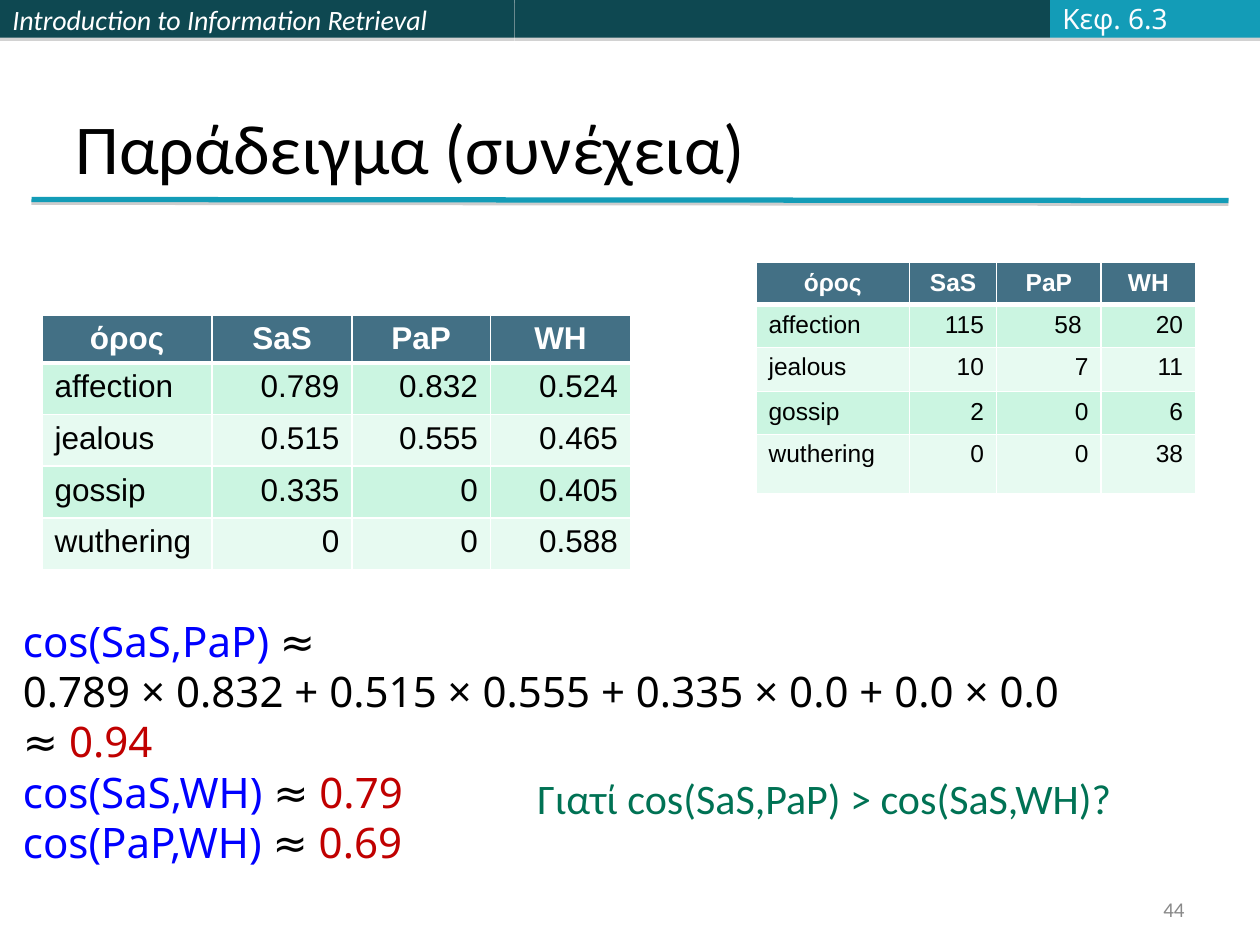
from dataclasses import dataclass

from lxml import etree
from pptx import Presentation
from pptx.dml.color import RGBColor
from pptx.enum.shapes import MSO_CONNECTOR, MSO_SHAPE
from pptx.enum.text import MSO_ANCHOR, PP_ALIGN
from pptx.oxml.ns import qn
from pptx.util import Inches, Pt

LEFT, CENTER, RIGHT = PP_ALIGN.LEFT, PP_ALIGN.CENTER, PP_ALIGN.RIGHT
TOP, MIDDLE, BOTTOM = MSO_ANCHOR.TOP, MSO_ANCHOR.MIDDLE, MSO_ANCHOR.BOTTOM
RECTANGLE, STRAIGHT = MSO_SHAPE.RECTANGLE, MSO_CONNECTOR.STRAIGHT
TITLE_ONLY = 5
GRID_COLUMNS, GRID_ROWS = 120, 90
SLIDE_WIDTH, SLIDE_HEIGHT = Inches(10), Inches(7.5)


@dataclass(frozen=True)
class Theme:
    dark: str = "0E4851"
    accent: str = "139CB7"
    shadow: str = "808080"
    white: str = "FFFFFF"
    pale: str = "FBFCFF"
    black: str = "000000"
    blue: str = "0000FF"
    red: str = "C00000"
    green: str = "007254"
    gray: str = "898989"
    table_head: str = "437085"
    bands: tuple = ("CBF5E1", "E7FAF1")
    body_font: str = "Calibri"
    formula_font: str = "Noto Sans"
    table_font: str = "Arial"
    title_size: int = 40
    formula_size: int = 24
    formula_leading: float = 28.8
    bar_size: int = 16
    number_size: int = 12


THEME = Theme()
HEADINGS = ["όρος", "SaS", "PaP", "WH"]
WEIGHTS = [
    HEADINGS,
    ["affection", "0.789", "0.832", "0.524"],
    ["jealous", "0.515", "0.555", "0.465"],
    ["gossip", "0.335", "0", "0.405"],
    ["wuthering", "0", "0", "0.588"],
]
COUNTS = [
    HEADINGS,
    ["affection", "115", "58 ", "20"],
    ["jealous", "10", "7", "11"],
    ["gossip", "2", "0", "6"],
    ["wuthering", "0", "0", "38"],
]
FORMULAS = [
    [("cos(SaS,PaP) ", THEME.blue), ("≈", THEME.black)],
    [("0.789 × 0.832 + 0.515 × 0.555 + 0.335 × 0.0 + 0.0 × 0.0", THEME.black)],
    [("≈ ", THEME.black), ("0.94", THEME.red)],
    [("cos(SaS,WH)", THEME.blue), (" ≈ ", THEME.black), ("0.79", THEME.red)],
    [("cos(PaP,WH) ", THEME.blue), ("≈ ", THEME.black), ("0.69", THEME.red)],
]


def grid(*lengths):
    units = (SLIDE_WIDTH / GRID_COLUMNS, SLIDE_HEIGHT / GRID_ROWS)
    return [round(length * units[index % 2]) for index, length in enumerate(lengths)]


def apply_values(target, values):
    for name, value in values.items():
        setattr(target, name, value)


def add_span(para, text, color, size, name, **style):
    span = para.add_run()
    span.text = text
    apply_values(span.font, {"size": Pt(size), "name": name, **style})
    span.font.color.rgb = RGBColor.from_string(color)


def write_line(frame, text, color, size, name, align=LEFT, anchor=TOP, **style):
    apply_values(frame, {"word_wrap": True, "vertical_anchor": anchor})
    para = frame.paragraphs[0]
    para.alignment = align
    add_span(para, text, color, size, name, **style)


def add_shadow(shape, distance, opacity):
    effects = etree.SubElement(shape._element.spPr, qn("a:effectLst"))
    shadow = etree.SubElement(effects, qn("a:outerShdw"), blurRad="0",
                              dist=str(Pt(distance)), dir="5400000", rotWithShape="0")
    color = etree.SubElement(shadow, qn("a:srgbClr"), val=THEME.shadow)
    etree.SubElement(color, qn("a:alpha"), val=str(opacity * 1000))


def add_bar(page, left, width, color):
    bar = page.shapes.add_shape(RECTANGLE, *grid(left, 0, width, 3.6))
    bar.fill.solid()
    bar.fill.fore_color.rgb = RGBColor.from_string(color)
    bar.line.fill.background()
    add_shadow(bar, 1.8, 35)
    return bar


def add_rule(page):
    rule = page.shapes.add_connector(STRAIGHT, *grid(3, 19, 117, 19.1))
    rule.line.color.rgb = RGBColor.from_string(THEME.accent)
    rule.line.width = Pt(3)
    add_shadow(rule, 1.6, 38)


def format_title(page, text):
    title = page.shapes.title
    left, top, width, height = grid(6, 3.6, 108, 15)
    apply_values(title, {"left": left, "top": top, "width": width, "height": height})
    write_line(title.text_frame, text, THEME.black, THEME.title_size,
               THEME.body_font, anchor=BOTTOM)


def add_label(page, place, *text_format, **style):
    box = page.shapes.add_textbox(*grid(*place))
    write_line(box.text_frame, *text_format, **style)


def add_formulas(page, place, lines):
    frame = page.shapes.add_textbox(*grid(*place)).text_frame
    frame.word_wrap = True
    for index, line in enumerate(lines):
        para = frame.add_paragraph() if index else frame.paragraphs[0]
        para.line_spacing = Pt(THEME.formula_leading)
        for text, color in line:
            add_span(para, text, color, THEME.formula_size, THEME.formula_font)


def border_cell(cell, widths):
    properties = cell._tc.get_or_add_tcPr()
    for index, (side, width) in enumerate(widths.items()):
        line = etree.Element(qn(f"a:{side}"), w=str(Pt(width)))
        fill = etree.SubElement(line, qn("a:solidFill"))
        etree.SubElement(fill, qn("a:srgbClr"), val=THEME.white)
        properties.insert(index, line)


def add_term_table(page, place, data, widths, heights, size):
    table = page.shapes.add_table(len(data), len(widths), *grid(*place)).table
    for column, width in zip(table.columns, widths):
        column.width = Inches(width)
    for row, height in zip(table.rows, heights):
        row.height = Inches(height)
    for row_index, values in enumerate(data):
        head = row_index == 0
        fill = THEME.table_head if head else THEME.bands[(row_index - 1) % 2]
        color = THEME.white if head else THEME.black
        borders = {"lnL": 1, "lnR": 1, "lnT": 3 if row_index == 1 else 1,
                   "lnB": 3 if head else 1}
        for column_index, text in enumerate(values):
            cell = table.cell(row_index, column_index)
            cell.fill.solid()
            cell.fill.fore_color.rgb = RGBColor.from_string(fill)
            align = CENTER if head else RIGHT if column_index else LEFT
            para = cell.text_frame.paragraphs[0]
            para.alignment = align
            add_span(para, text, color, size, THEME.table_font, bold=head)
            border_cell(cell, borders)


def main():
    deck = Presentation()
    apply_values(deck, {"slide_width": SLIDE_WIDTH, "slide_height": SLIDE_HEIGHT})
    page = deck.slides.add_slide(deck.slide_layouts[TITLE_ONLY])
    course_bar = add_bar(page, 0, 49, THEME.dark)
    write_line(course_bar.text_frame, "Introduction to Information Retrieval", THEME.white,
               THEME.bar_size, THEME.body_font, anchor=MIDDLE, italic=True)
    add_bar(page, 49, 51, THEME.dark)
    add_bar(page, 100, 20, THEME.accent)
    add_rule(page)
    format_title(page, "Παράδειγμα (συνέχεια)")
    add_term_table(page, (4, 30, 56, 24.2), WEIGHTS, [1.35, 1.11, 1.1, 1.11],
                   [0.37] + [0.41] * 4, 18)
    add_formulas(page, (1, 58, 114, 25.4), FORMULAS)
    add_label(page, (50, 73, 57.6, 6), "Γιατί cos(SaS,PaP) > cos(SaS,WH)?",
              THEME.green, THEME.formula_size, THEME.body_font)
    add_label(page, (100, -0.5, 13.2, 4.4), "Κεφ. 6.3", THEME.pale,
              THEME.bar_size, THEME.formula_font, anchor=MIDDLE)
    add_label(page, (86, 85, 28, 3.2), "44", THEME.gray, THEME.number_size,
              THEME.body_font, align=RIGHT, anchor=MIDDLE)
    add_term_table(page, (72, 25, 42, 22), COUNTS, [1.22, 0.69, 0.83, 0.75],
                   [0.33, 0.34, 0.35, 0.34, 0.47], 14)
    deck.save("out.pptx")


if __name__ == "__main__":
    main()
